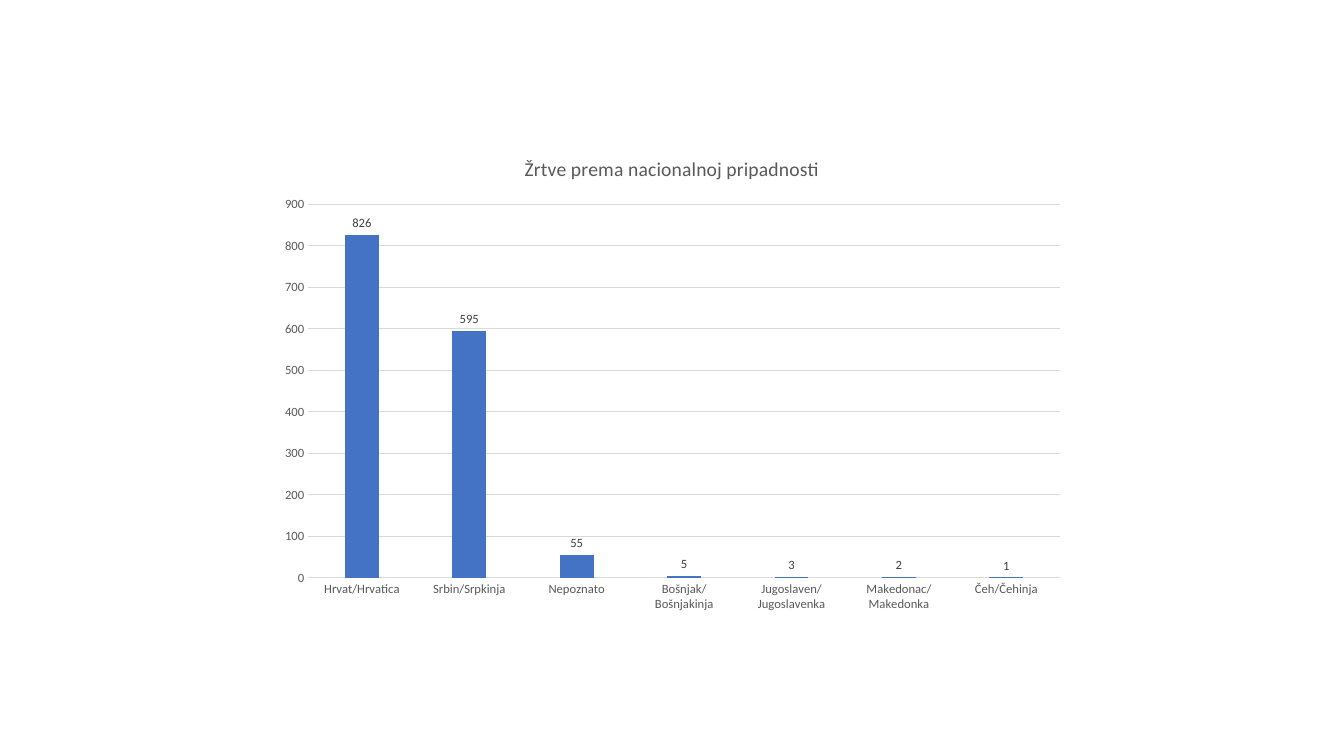
from lxml import etree
from pptx import Presentation
from pptx.chart.axis import CategoryAxis, ValueAxis
from pptx.chart.chart import Chart
from pptx.chart.data import CategoryChartData
from pptx.dml.color import RGBColor
from pptx.enum.chart import XL_CHART_TYPE, XL_LABEL_POSITION, XL_TICK_MARK
from pptx.oxml.ns import qn
from pptx.text.text import Font
from pptx.util import Emu, Pt

COLUMN = XL_CHART_TYPE.COLUMN_CLUSTERED
OUTSIDE_END = XL_LABEL_POSITION.OUTSIDE_END
NO_TICK = XL_TICK_MARK.NONE

PX = 9525
COLORS = {"bar": "4472C4", "grid": "D9D9D9", "text": "595959", "label": "404040"}
FONT = "Calibri"
TITLE = "Žrtve prema nacionalnoj pripadnosti"
VICTIMS = {
    "Hrvat/Hrvatica": 826,
    "Srbin/Srpkinja": 595,
    "Nepoznato": 55,
    "Bošnjak/Bošnjakinja": 5,
    "Jugoslaven/Jugoslavenka": 3,
    "Makedonac/Makedonka": 2,
    "Čeh/Čehinja": 1,
}
PLOT_AREA = {"x": 0.05, "y": 0.14, "w": 0.93, "h": 0.77}


def px(n: int) -> Emu:
    return Emu(n * PX)


def rgb(name: str) -> RGBColor:
    return RGBColor.from_string(COLORS[name])


def set_font(font: Font, size: int, color: str) -> None:
    font.name = FONT
    font.size = Pt(size)
    font.bold = False
    font.color.rgb = rgb(color)


def style_axis(axis: CategoryAxis | ValueAxis) -> None:
    axis.major_tick_mark = axis.minor_tick_mark = NO_TICK
    set_font(axis.tick_labels.font, 9, "text")


def place_plot_area(chart: Chart) -> None:
    """Fix the inner plot area as fractions of the chart frame."""
    area = chart.element.find(".//" + qn("c:plotArea"))
    layout = area.find(qn("c:layout"))
    if layout is None:
        layout = etree.Element(qn("c:layout"))
        area.insert(0, layout)
    manual = etree.SubElement(layout, qn("c:manualLayout"))
    settings = {"layoutTarget": "inner", "xMode": "edge", "yMode": "edge", **PLOT_AREA}
    for tag, value in settings.items():
        etree.SubElement(manual, qn(f"c:{tag}")).set("val", str(value))


def style_chart(chart: Chart) -> None:
    chart.has_legend = False
    chart.font.name = FONT
    chart.font.size = Pt(10)
    chart.has_title = True
    tf = chart.chart_title.text_frame
    tf.text = TITLE
    set_font(tf.paragraphs[0].runs[0].font, 14, "text")
    chart.chart_title.include_in_layout = False

    cat_axis, val_axis = chart.category_axis, chart.value_axis
    style_axis(cat_axis)
    style_axis(val_axis)
    val_axis.minimum_scale, val_axis.maximum_scale = 0, 900
    val_axis.major_unit = 100
    val_axis.has_major_gridlines = True
    val_axis.format.line.fill.background()
    for line in (cat_axis.format.line, val_axis.major_gridlines.format.line):
        line.color.rgb = rgb("grid")
        line.width = Pt(0.75)

    plot = chart.plots[0]
    plot.gap_width, plot.overlap = 219, -27
    plot.vary_by_categories = False
    fill = plot.series[0].format.fill
    fill.solid()
    fill.fore_color.rgb = rgb("bar")
    plot.has_data_labels = True
    labels = plot.data_labels
    labels.show_value = True
    labels.position = OUTSIDE_END
    set_font(labels.font, 9, "label")


def main() -> None:
    prs = Presentation()
    prs.slide_width, prs.slide_height = px(1280), px(720)
    blank_layout = prs.slide_layouts[6]
    s = prs.slides.add_slide(blank_layout)

    data = CategoryChartData()
    data.categories = list(VICTIMS)
    data.add_series("Series 1", list(VICTIMS.values()))
    frame = s.shapes.add_chart(COLUMN, px(255), px(130), px(770), px(462), data)
    style_chart(frame.chart)
    place_plot_area(frame.chart)
    prs.save("out.pptx")


if __name__ == "__main__":
    main()
